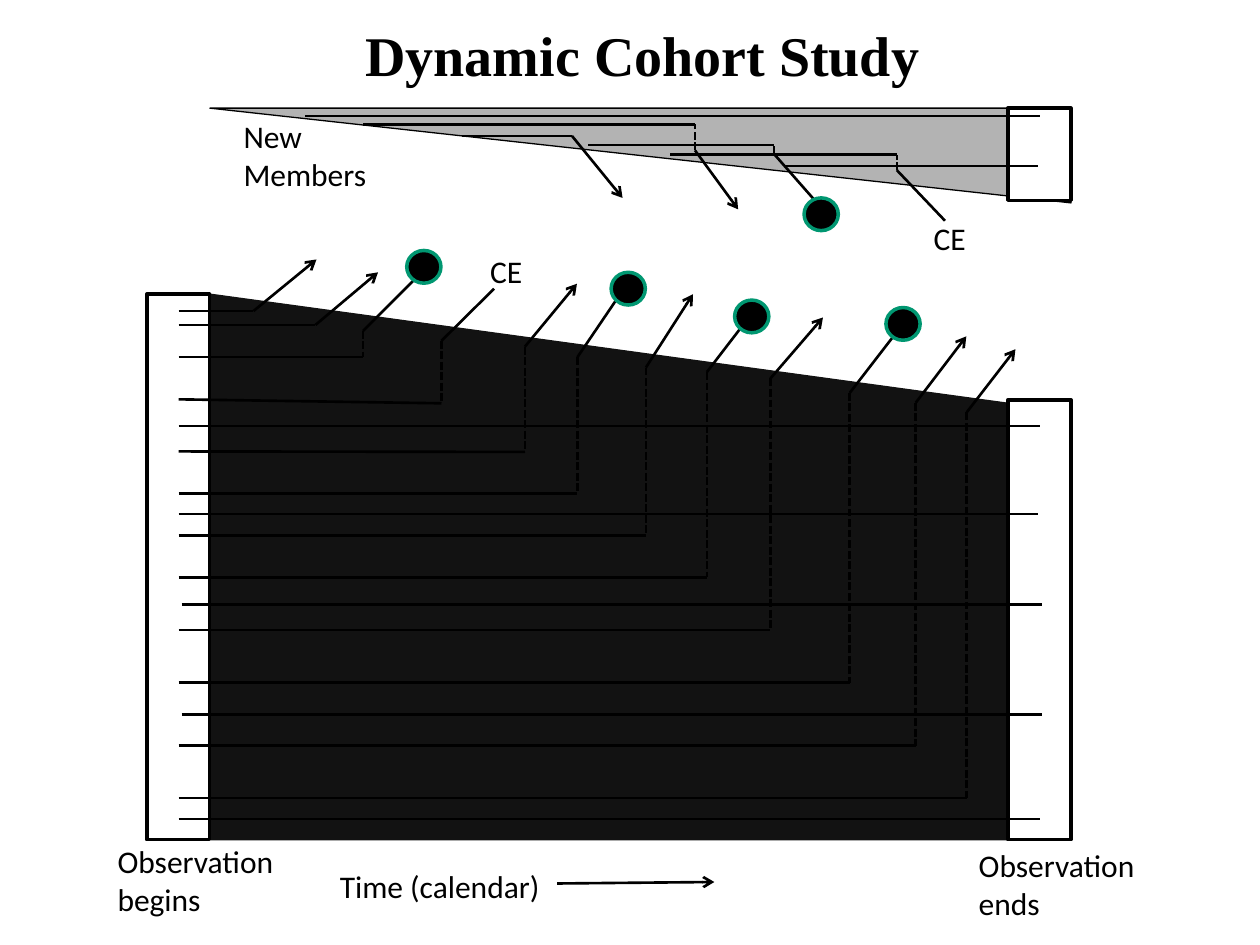
from lxml.etree import SubElement
from pptx import Presentation
from pptx.dml.color import RGBColor
from pptx.enum.dml import MSO_LINE_DASH_STYLE as Dash
from pptx.enum.shapes import MSO_CONNECTOR as Connector, MSO_SHAPE as Shape
from pptx.enum.text import MSO_ANCHOR, MSO_AUTO_SIZE, PP_ALIGN
from pptx.oxml.ns import qn
from pptx.util import Cm, Pt

BLACK = RGBColor(0x00, 0x00, 0x00)
WHITE = RGBColor(0xFF, 0xFF, 0xFF)
DARK = RGBColor(0x12, 0x12, 0x12)
GRAY = RGBColor(0xB3, 0xB3, 0xB3)
GREEN = RGBColor(0x00, 0x97, 0x71)

# Content, in centimetres
TITLE = ("Dynamic Cohort Study", 7.06, 0.28, 11.79, 1.63)
# text, left, top, width, height, wrap
LABELS = [
    ("New Members", 4.66, 2.24, 3.39, 1.8, True),
    ("CE", 9.63, 4.95, 1.17, 1.02, False),
    ("CE", 18.57, 4.29, 1.17, 1.02, False),
    ("Observation begins", 2.12, 16.85, 4.26, 1.8, True),
    ("Time (calendar)", 6.6, 17.35, 5.03, 1.02, False),
    ("Observation ends", 19.48, 16.94, 4.02, 1.8, True),
]
OBSERVATION_BOXES = [  # left, top, height
    (2.96, 5.93, 11), (20.32, 8.06, 8.87), (20.32, 2.18, 1.86),
]
BOX_WIDTH = 1.27
ENTRY = 3.6
# start x, start y, exit x, row end y, bend y, tip x, tip y, has arrowhead
LEAVERS = [
    (ENTRY, 6.27, 5.11, 6.27, 6.27, 6.38, 5.23, True),
    (ENTRY, 6.55, 6.36, 6.55, 6.55, 7.62, 5.49, True),
    (ENTRY, 7.2, 7.32, 7.2, 6.67, 8.38, 5.61, False),
    (ENTRY, 8.05, 8.9, 8.13, 6.87, 9.96, 5.82, False),
    (ENTRY, 9.1, 10.58, 9.11, 6.99, 11.63, 5.72, True),
    (ENTRY, 9.95, 11.64, 9.95, 7.2, 12.42, 6.05, False),
    (ENTRY, 10.8, 13.02, 10.8, 7.41, 13.97, 5.93, True),
    (ENTRY, 11.64, 14.25, 11.64, 7.5, 15.11, 6.38, False),
    (ENTRY, 12.7, 15.53, 12.7, 7.63, 16.59, 6.4, True),
    (ENTRY, 13.76, 17.13, 13.76, 7.92, 18.11, 6.65, False),
    (ENTRY, 15.03, 18.46, 15.03, 8.12, 19.48, 6.78, True),
    (ENTRY, 16.09, 19.49, 16.09, 8.31, 20.47, 7.04, True),
    (9.32, 2.74, 11.53, 2.74, 2.74, 12.55, 3.99, True),
    (7.32, 2.51, 14.01, 2.51, 3.03, 14.88, 4.22, True),
    (11.86, 2.92, 15.6, 2.92, 3.1, 16.54, 4.17, False),
    (13.51, 3.12, 18.08, 3.12, 3.43, 19.05, 4.45, False),
]
STAYERS = [  # start x, y, end x
    (ENTRY, 8.59, 20.96), (ENTRY, 10.36, 20.93), (3.66, 12.19, 21.01),
    (3.66, 14.4, 21.01), (ENTRY, 16.51, 20.96),
    (6.15, 2.34, 20.96), (15.8, 3.35, 20.93),
]
CASES = [(8.2, 5.05), (12.32, 5.49), (14.81, 6.05), (16.21, 3.99), (17.86, 6.2)]
TIME_ARROW = (11.23, 17.81, 14.4, 17.78)


def add_filled(slide, kind, left, top, width, height, fill, line, line_width):
    shape = slide.shapes.add_shape(kind, Cm(left), Cm(top), Cm(width), Cm(height))
    shape.shadow.inherit = False
    shape.fill.solid()
    shape.fill.fore_color.rgb = fill
    shape.line.color.rgb = line
    shape.line.width = Pt(line_width)
    return shape


def add_line(slide, x1, y1, x2, y2, dashed=False, arrow=False):
    connector = slide.shapes.add_connector(
        Connector.STRAIGHT, Cm(x1), Cm(y1), Cm(x2), Cm(y2))
    connector.line.color.rgb = BLACK
    connector.line.width = Pt(1.5)
    if dashed:
        connector.line.dash_style = Dash.SQUARE_DOT
    if arrow:
        SubElement(connector.line._get_or_add_ln(), qn("a:tailEnd"), type="arrow")
    SubElement(connector._element.spPr, qn("a:effectLst"))


def format_text(shape, text, font_name, size, wrap, bold=False):
    frame = shape.text_frame
    frame.text = text
    frame.word_wrap = wrap
    font = frame.paragraphs[0].runs[0].font
    font.name, font.size, font.bold = font_name, Pt(size), bold
    font.color.rgb = BLACK


def main():
    presentation = Presentation()
    presentation.slide_width, presentation.slide_height = Cm(25.4), Cm(19.05)
    slide = presentation.slides.add_slide(presentation.slide_layouts[5])

    # Title
    text, *box = TITLE
    title = slide.shapes.title
    title.left, title.top, title.width, title.height = map(Cm, box)
    format_text(title, text, "Times New Roman", 32, False, True)
    title.text_frame.vertical_anchor = MSO_ANCHOR.TOP
    title.text_frame.paragraphs[0].alignment = PP_ALIGN.CENTER

    # Cohort areas and observation boxes
    cohort = add_filled(slide, Shape.FLOWCHART_MANUAL_INPUT,
                        4.23, 5.93, 16.09, 11, DARK, DARK, 0.75)
    cohort._element.spPr.xfrm.set("flipH", "1")
    newcomers = add_filled(slide, Shape.RIGHT_TRIANGLE,
                           4.23, 2.18, 17.36, 1.91, GRAY, BLACK, 0.75)
    newcomers.rotation = 180
    for left, top, height in OBSERVATION_BOXES:
        add_filled(slide, Shape.RECTANGLE, left, top, BOX_WIDTH, height,
                   WHITE, BLACK, 2)

    # Members who leave, then those who stay to the end
    for x, y, exit_x, row_end, bend, tip_x, tip_y, arrow in LEAVERS:
        add_line(slide, x, y, exit_x, row_end)
        if bend != row_end:
            add_line(slide, exit_x, bend, exit_x, row_end, dashed=True)
        add_line(slide, exit_x, bend, tip_x, tip_y, arrow=arrow)
    for x, y, end_x in STAYERS:
        add_line(slide, x, y, end_x, y)
    add_line(slide, *TIME_ARROW, arrow=True)

    # Cases
    for left, top in CASES:
        add_filled(slide, Shape.OVAL, left, top, 0.69, 0.66, BLACK, GREEN, 2)

    # Labels
    for text, left, top, width, height, wrap in LABELS:
        label = slide.shapes.add_textbox(Cm(left), Cm(top), Cm(width), Cm(height))
        format_text(label, text, "Calibri", 18, wrap)
        label.text_frame.auto_size = MSO_AUTO_SIZE.SHAPE_TO_FIT_TEXT

    presentation.save("out.pptx")


if __name__ == "__main__":
    main()
